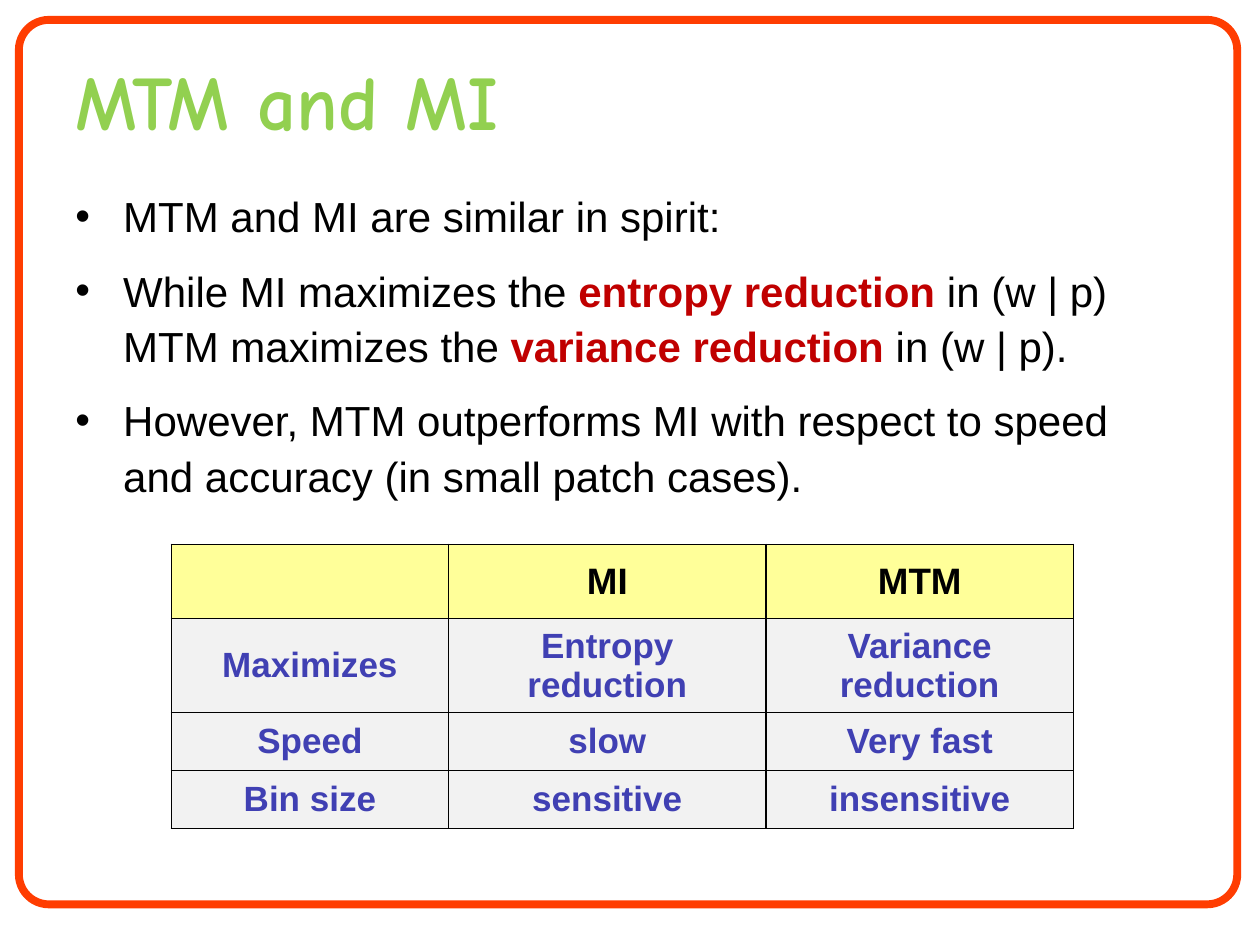
import pptx
import pptx.util
import pptx.dml.color
import pptx.enum.shapes
import pptx.enum.text
import pptx.oxml.ns
from dataclasses import dataclass
from lxml import etree

Pt = pptx.util.Pt
Inches = pptx.util.Inches
RGB = pptx.dml.color.RGBColor.from_string
MIDDLE = pptx.enum.text.MSO_ANCHOR.MIDDLE
CENTER = pptx.enum.text.PP_ALIGN.CENTER
LEFT = pptx.enum.text.PP_ALIGN.LEFT


@dataclass
class Theme:
    frame: str = "FF3D01"
    title: str = "92D050"
    ink: str = "000000"
    accent: str = "C00000"
    head_fill: str = "FFFF99"
    body_fill: str = "F2F2F2"
    cell_ink: str = "4040B3"
    title_font: str = "Comic Neue"
    font: str = "Arial"
    title_size: int = 44
    text_size: int = 24
    head_size: int = 21
    cell_size: int = 20


def child(parent, tag, **attrs):
    return etree.SubElement(parent, pptx.oxml.ns.qn(tag), attrs)


class Deck:
    """Holds the theme and the current slide; boxes are shares of the slide."""

    def __init__(self, theme):
        self.theme = theme
        self.prs = pptx.Presentation()
        self.prs.slide_width, self.prs.slide_height = Inches(10), Inches(7.5)
        self.slide = self.prs.slides.add_slide(self.prs.slide_layouts[5])

    def box(self, x, y, w, h):
        W, H = self.prs.slide_width, self.prs.slide_height
        return [int(v) for v in (x * W, y * H, w * W, h * H)]

    def apply(self, obj, formats):
        for name, value in formats.items():
            setattr(obj, name, value)

    def run(self, p, text, size, color, bold=False, font=None):
        r = p.add_run()
        r.text = text
        self.apply(r.font, {"name": font or self.theme.font, "size": Pt(size), "bold": bold})
        r.font.color.rgb = RGB(color)

    def frame(self, share, radius, width):
        kind = pptx.enum.shapes.MSO_SHAPE.ROUNDED_RECTANGLE
        sp = self.slide.shapes.add_shape(kind, *self.box(*share))
        sp.shadow.inherit = False
        sp.adjustments[0] = radius
        sp.fill.background()
        sp.line.color.rgb = RGB(self.theme.frame)
        sp.line.width = Pt(width)

    def title(self, share, text):
        sp = self.slide.shapes.title
        self.apply(sp, dict(zip(("left", "top", "width", "height"), self.box(*share))))
        sp.text_frame.vertical_anchor = MIDDLE
        p = sp.text_frame.paragraphs[0]
        p.alignment = LEFT
        t = self.theme
        self.run(p, text, t.title_size, t.title, True, t.title_font)

    def bullets(self, share, items):
        """Each item is a list of parts; every second part is stressed."""
        t = self.theme
        tf = self.slide.shapes.add_textbox(*self.box(*share)).text_frame
        tf.word_wrap = True
        for i, parts in enumerate(items):
            p = tf.add_paragraph() if i else tf.paragraphs[0]
            self.apply(p, {"line_spacing": 1.1, "space_before": Pt(0.2 * t.text_size),
                           "space_after": Pt(6)})
            pPr = p._p.get_or_add_pPr()
            indent = Inches(0.38)
            pPr.set("marL", str(indent))
            pPr.set("indent", str(-indent))
            child(pPr, "a:buFont", typeface=t.font)
            child(pPr, "a:buChar", char="•")
            for j, text in enumerate(parts):
                stressed = j % 2 == 1
                self.run(p, text, t.text_size, t.accent if stressed else t.ink, stressed)

    def borders(self, cell):
        tcPr = cell._tc.get_or_add_tcPr()
        for i, side in enumerate(("a:lnL", "a:lnR", "a:lnT", "a:lnB")):
            ln = etree.Element(pptx.oxml.ns.qn(side), w=str(Pt(1)))
            child(child(ln, "a:solidFill"), "a:srgbClr", val=self.theme.ink)
            tcPr.insert(i, ln)

    def table(self, share, cols, rows, data):
        t = self.theme
        shapes = self.slide.shapes
        table = shapes.add_table(len(rows), len(cols), *self.box(*share)).table
        for col, width in zip(table.columns, cols):
            col.width = Inches(width)
        for row, height in zip(table.rows, rows):
            row.height = Inches(height)
        for i, texts in enumerate(data):
            fill, size, color = ((t.body_fill, t.cell_size, t.cell_ink) if i
                                 else (t.head_fill, t.head_size, t.ink))
            for j, text in enumerate(texts):
                cell = table.cell(i, j)
                self.apply(cell, {"vertical_anchor": MIDDLE,
                                  "margin_left": Inches(0.09), "margin_right": Inches(0.09),
                                  "margin_top": Inches(0.04), "margin_bottom": Inches(0.04)})
                cell.fill.solid()
                cell.fill.fore_color.rgb = RGB(fill)
                self.borders(cell)
                for k, line in enumerate(text.split("\n") if text else []):
                    tf = cell.text_frame
                    p = tf.add_paragraph() if k else tf.paragraphs[0]
                    p.alignment = CENTER
                    self.run(p, line, size, color, True)


def main():
    deck = Deck(Theme())

    # Frame and title
    deck.frame((0.015, 0.021, 0.967, 0.936), 0.034, 4.5)
    deck.title((0.05, 0.05, 0.9, 0.11), "MTM and MI")

    # Points
    deck.bullets((0.05, 0.19, 0.9, 0.7), [
        ["MTM and MI are similar in spirit:"],
        ["While MI maximizes the ", "entropy reduction ",
         "in (w | p) MTM maximizes the ", "variance reduction ", "in (w | p)."],
        ["However, MTM outperforms MI with respect to speed and accuracy "
         "(in small patch cases)."],
    ])

    # Comparison table
    deck.table((0.136, 0.576, 0.715, 0.3), [2.2, 2.52, 2.44], [0.59, 0.73, 0.46, 0.46], [
        ["", "MI", "MTM"],
        ["Maximizes", "Entropy\nreduction", "Variance reduction"],
        ["Speed", "slow", "Very fast"],
        ["Bin size", "sensitive", "insensitive"],
    ])

    deck.prs.save("out.pptx")


if __name__ == "__main__":
    main()
